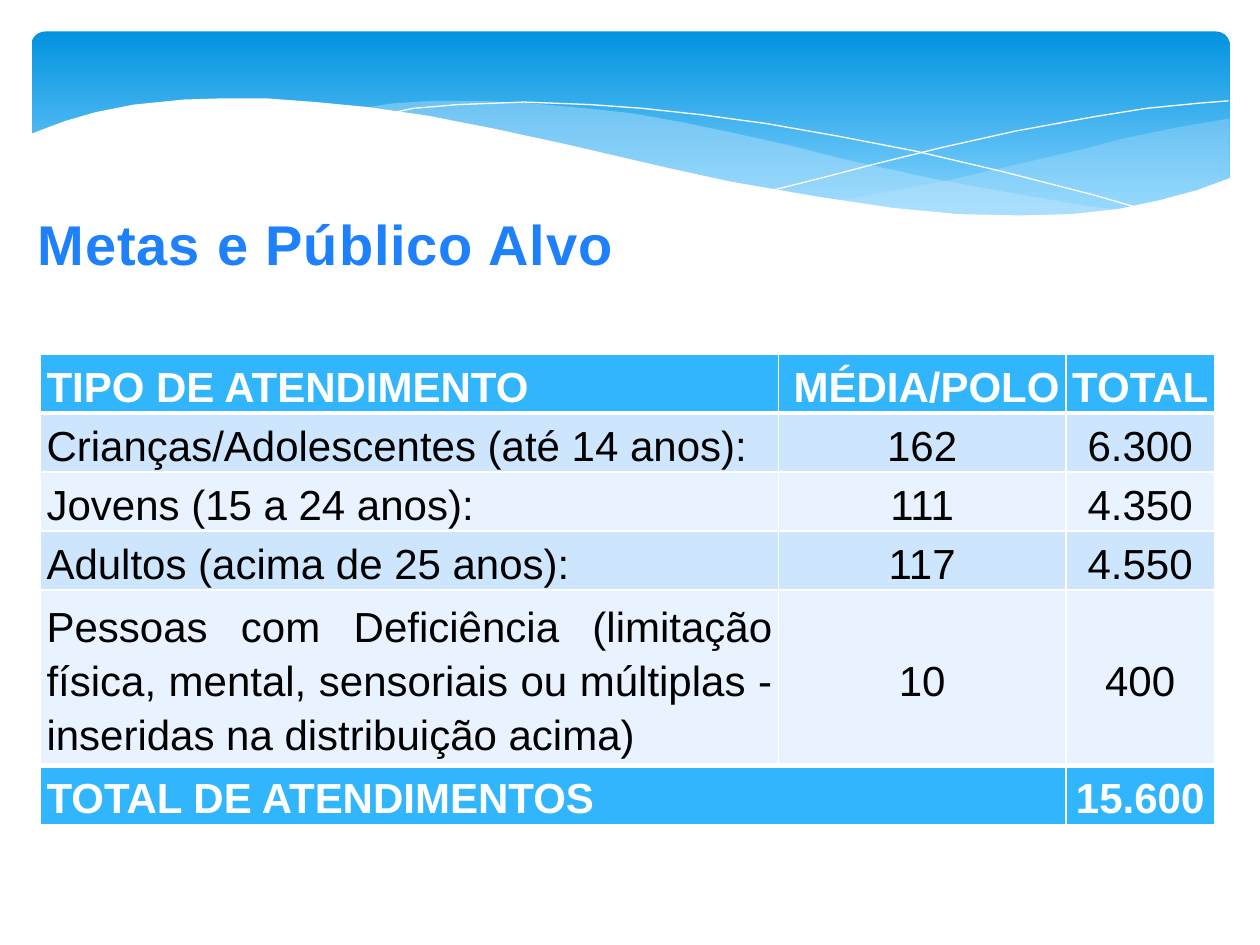
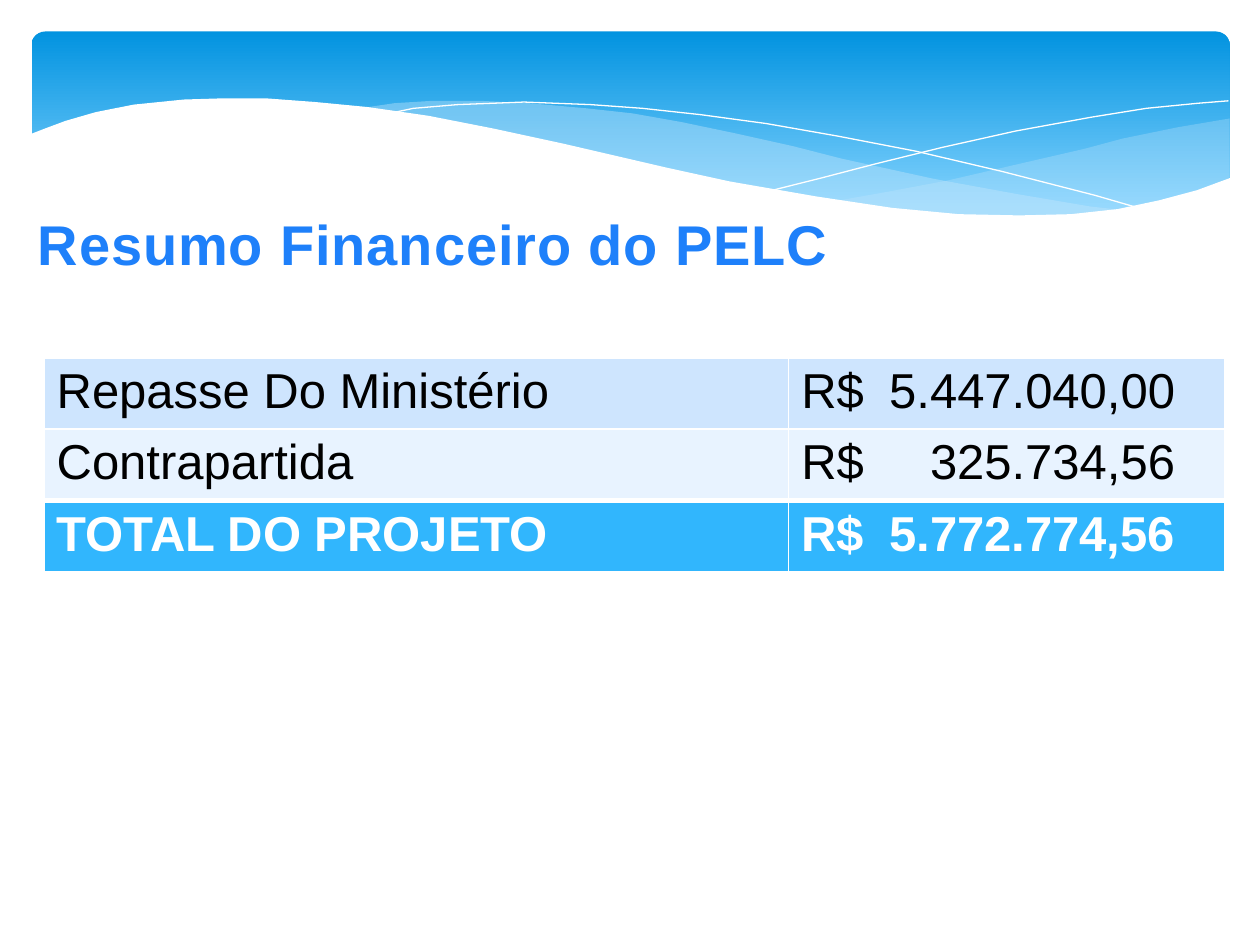
from dataclasses import dataclass

import pptx
import pptx.dml.color
import pptx.enum.shapes
import pptx.enum.text
import pptx.oxml
import pptx.oxml.ns
import pptx.util

Pt = pptx.util.Pt
ALIGN = pptx.enum.text.PP_ALIGN
FONT = "Arial"
COLOURS = {
    "white": "FFFFFF",
    "black": "000000",
    "title": "1E80FA",
    "band_top": "0293E0",
    "band_bottom": "83D3FE",
    "ribbon": "C6E7FC",
    "strong": "31B6FD",
    "dark": "CEE5FE",
    "light": "E8F3FF",
}


@dataclass
class Wave:
    """An outline in the band, closed when it has a fill."""
    points: list[tuple[float, float]]
    fill: str | None = None
    opacity: int = 100


@dataclass
class Row:
    """One table row with its fill, alignments and height."""
    texts: tuple[str, ...]
    fill: str
    aligns: tuple[ALIGN, ...]
    height: float


@dataclass
class Grid:
    """A table with its place, text style and heavy horizontal edges."""
    left: float
    top: float
    widths: tuple[float, ...]
    rows: list[Row]
    size: float
    heavy_edges: set[int]
    margins: tuple[float, float, float, float] = (7.2, 3.6, 7.2, 3.6)
    line_spacing: float = 1.0
    anchor: pptx.enum.text.MSO_ANCHOR = pptx.enum.text.MSO_ANCHOR.TOP
    tab_stop: float | None = None
    merge: tuple[int, int, int] | None = None


WAVES = [
    Wave([(702.7, 67.7), (673.2, 72.7), (641.5, 79.2), (619.9, 85), (579.6, 94.3),
          (542.2, 103), (508.3, 109.4), (475.9, 115.2), (497.5, 118.1), (527, 121),
          (553.7, 123.1), (586.1, 123.8), (614.9, 122.4), (640.1, 119.5),
          (663.1, 115.2), (683.3, 109.4), (702.7, 101.5)], "ribbon", 29),
    Wave([(643, 120.2), (623.5, 118.1), (581, 110.9), (533.5, 102.2), (481, 90.7),
          (452.9, 83.5), (420.5, 76.3), (389.5, 69.8), (361.4, 64.8), (334.8, 61.9),
          (302.4, 59), (273.6, 57.6), (247.7, 57.6), (225.4, 59), (205.9, 61.9),
          (232.6, 64.8), (260.6, 69.8), (290.9, 76.3), (323.3, 83.5), (381.6, 97.2),
          (420.5, 105.1), (456.5, 112.3), (489.6, 117.4), (519.8, 121),
          (547.9, 123.1), (581, 124.6), (603.4, 123.8), (624.2, 122.4)], "ribbon", 40),
    Wave([(222.5, 64.8), (236.2, 61.9), (261.4, 59.8), (299.5, 58.3), (337.7, 59.8),
          (367.2, 61.9), (400.3, 65.5), (437.8, 70.6), (478.8, 77.8), (523.4, 86.4),
          (572.4, 97.9), (625.7, 111.6), (653, 119.5)]),
    Wave([(441.4, 108.7), (470.2, 101.5), (500.4, 93.6), (538.6, 84.2), (580.3, 74.9),
          (623.5, 67), (655.2, 61.9), (684.7, 59), (702, 57.6)]),
    Wave([(703.4, 101.5), (684, 108.7), (662.4, 114.5), (638.6, 119.5), (612, 122.4),
          (582.5, 123.1), (547.9, 122.4), (509.8, 118.8), (466.6, 112.3),
          (416.9, 103.7), (380.9, 95.8), (321.8, 82.1), (281.5, 73.4), (244.8, 66.2),
          (210.2, 61.2), (180, 58.3), (151.9, 56.2), (127.4, 56.2), (105.1, 56.9),
          (76.3, 59.8), (54.7, 64.1), (37.4, 69.1), (25.9, 73.4), (16.6, 77),
          (16.6, 161.3), (703.4, 161.3)], "white"),
]

HEADER = (ALIGN.LEFT, ALIGN.RIGHT, ALIGN.RIGHT)
BODY = (ALIGN.LEFT, ALIGN.CENTER, ALIGN.CENTER)
JUSTIFIED = (ALIGN.JUSTIFY, ALIGN.CENTER, ALIGN.CENTER)
PLAIN = (ALIGN.LEFT, ALIGN.LEFT)

TARGETS = Grid(
    23, 202.3, (421.9, 164.2, 85), [
        Row(("TIPO DE ATENDIMENTO", "MÉDIA/POLO", "TOTAL"), "strong", HEADER, 33.7),
        Row(("Crianças/Adolescentes (até 14 anos):", "162", "6.300"), "dark", BODY, 33.7),
        Row(("Jovens (15 a 24 anos):", "111", "4.350"), "light", BODY, 33.7),
        Row(("Adultos (acima de 25 anos):", "117", "4.550"), "dark", BODY, 33.7),
        Row(("Pessoas com Deficiência (limitação física, mental, sensoriais ou "
             "múltiplas - inseridas na distribuição acima)", "10", "400"),
            "light", JUSTIFIED, 100.5),
        Row(("TOTAL DE ATENDIMENTOS", "", "15.600"), "strong", BODY, 33.7),
    ],
    size=24, heavy_edges={1, 5}, margins=(3.6, 0.72, 3.6, 0), line_spacing=1.15,
    anchor=pptx.enum.text.MSO_ANCHOR.MIDDLE, merge=(5, 0, 1))

FINANCES = Grid(
    25.2, 204.5, (425.5, 249.1), [
        Row(("Repasse Do Ministério", "R$\t5.447.040,00"), "dark", PLAIN, 40.8),
        Row(("Contrapartida", "R$\t325.734,56"), "light", PLAIN, 40.8),
        Row(("TOTAL DO PROJETO", "R$\t5.772.774,56"), "strong", PLAIN, 40.8),
    ],
    size=28, heavy_edges={2}, tab_stop=213.5)


def rgb(name: str) -> pptx.dml.color.RGBColor:
    """Return the named colour."""
    return pptx.dml.color.RGBColor.from_string(COLOURS[name])


def draw_wave(page, wave: Wave):
    """Draw one outline and return its shape."""
    start, *others = [(Pt(x), Pt(y)) for x, y in wave.points]
    builder = page.shapes.build_freeform(*start)
    builder.add_line_segments(others, close=wave.fill is not None)
    shape = builder.convert_to_shape()
    shape.shadow.inherit = False
    if wave.fill is None:
        shape.fill.background()
        shape.line.color.rgb = rgb("white")
        shape.line.width = Pt(0)
        return shape
    shape.line.fill.background()
    shape.fill.solid()
    shape.fill.fore_color.rgb = rgb(wave.fill)
    if wave.opacity < 100:
        colour = shape.element.spPr.find(".//" + pptx.oxml.ns.qn("a:srgbClr"))
        alpha = colour.makeelement(
            pptx.oxml.ns.qn("a:alpha"), {"val": str(wave.opacity * 1000)})
        colour.append(alpha)
    return shape


def add_band(page, layout) -> None:
    """Draw the wave band and place it on the shared layout."""
    for holder in list(layout.placeholders):
        if holder.placeholder_format.idx != 0:
            holder.element.getparent().remove(holder.element)
    band = page.shapes.add_shape(
        pptx.enum.shapes.MSO_SHAPE.ROUNDED_RECTANGLE, Pt(18), Pt(18), Pt(684.7), Pt(112.3))
    band.adjustments[0] = 0.07
    band.shadow.inherit = False
    band.line.fill.background()
    band.fill.gradient()
    band.fill.gradient_angle = 270
    top, bottom = band.fill.gradient_stops
    top.color.rgb, top.position = rgb("band_top"), 0
    bottom.color.rgb, bottom.position = rgb("band_bottom"), 0.9
    for shape in [band] + [draw_wave(page, wave) for wave in WAVES]:
        layout.shapes.element.append(shape.element)


def add_title(page, text: str, width: float) -> None:
    """Place and format the slide title."""
    title = page.shapes.title
    title.left, title.top, title.width, title.height = Pt(14.4), Pt(116), Pt(width), Pt(46)
    frame = title.text_frame
    frame.text = text
    frame.word_wrap = False
    frame.auto_size = pptx.enum.text.MSO_AUTO_SIZE.NONE
    frame.vertical_anchor = pptx.enum.text.MSO_ANCHOR.TOP
    para = frame.paragraphs[0]
    para.alignment = ALIGN.LEFT
    span = para.runs[0]
    span.font.name, span.font.size, span.font.bold = FONT, Pt(32), True
    span.font.color.rgb = rgb("title")
    span.font._element.set("spc", "50")


def add_borders(cell, top: float, bottom: float) -> None:
    """Give a cell white borders with the given top and bottom widths."""
    properties = cell._tc.get_or_add_tcPr()
    for side, width in {"L": 1, "R": 1, "T": top, "B": bottom}.items():
        properties.append(pptx.oxml.parse_xml(
            f'<a:ln{side} {pptx.oxml.ns.nsdecls("a")} w="{Pt(width)}"><a:solidFill>'
            f'<a:srgbClr val="{COLOURS["white"]}"/></a:solidFill></a:ln{side}>'))


def format_cell(cell, text: str, align: ALIGN, row: Row, grid: Grid) -> None:
    """Write a cell's text and set its fill and font."""
    cell.fill.solid()
    cell.fill.fore_color.rgb = rgb(row.fill)
    cell.vertical_anchor = grid.anchor
    cell.margin_left, cell.margin_top, cell.margin_right, cell.margin_bottom = map(
        Pt, grid.margins)
    para = cell.text_frame.paragraphs[0]
    para.text = text
    para.alignment = align
    para.line_spacing = grid.line_spacing
    if "\t" in text:
        para._p.get_or_add_pPr().append(pptx.oxml.parse_xml(
            f'<a:tabLst {pptx.oxml.ns.nsdecls("a")}>'
            f'<a:tab pos="{Pt(grid.tab_stop)}" algn="r"/></a:tabLst>'))
    strong = row.fill == "strong"
    for span in para.runs:
        span.font.name, span.font.size, span.font.bold = FONT, Pt(grid.size), strong
        span.font.color.rgb = rgb("white" if strong else "black")


def add_grid(page, grid: Grid) -> None:
    """Draw a table."""
    height = sum(row.height for row in grid.rows)
    table = page.shapes.add_table(
        len(grid.rows), len(grid.widths), Pt(grid.left), Pt(grid.top),
        Pt(sum(grid.widths)), Pt(height)).table
    table.first_row = table.horz_banding = False
    for column, width in zip(table.columns, grid.widths):
        column.width = Pt(width)
    for index, row in enumerate(grid.rows):
        table.rows[index].height = Pt(row.height)
        top, bottom = (3 if edge in grid.heavy_edges else 1 for edge in (index, index + 1))
        for cell, text, align in zip(table.rows[index].cells, row.texts, row.aligns):
            add_borders(cell, top, bottom)
            format_cell(cell, text, align, row, grid)
    if grid.merge:
        row_index, first, last = grid.merge
        table.cell(row_index, first).merge(table.cell(row_index, last))


def main() -> None:
    """Build the deck and save it."""
    deck = pptx.Presentation()
    deck.slide_width, deck.slide_height = Pt(720), Pt(540)
    layout = deck.slide_layouts[5]
    slides = [("Metas e Público Alvo", 346.3, TARGETS),
              ("Resumo Financeiro do PELC", 470.2, FINANCES)]
    for number, (title, width, grid) in enumerate(slides):
        page = deck.slides.add_slide(layout)
        if number == 0:
            add_band(page, layout)
        add_title(page, title, width)
        add_grid(page, grid)
    deck.save("out.pptx")


if __name__ == "__main__":
    main()
